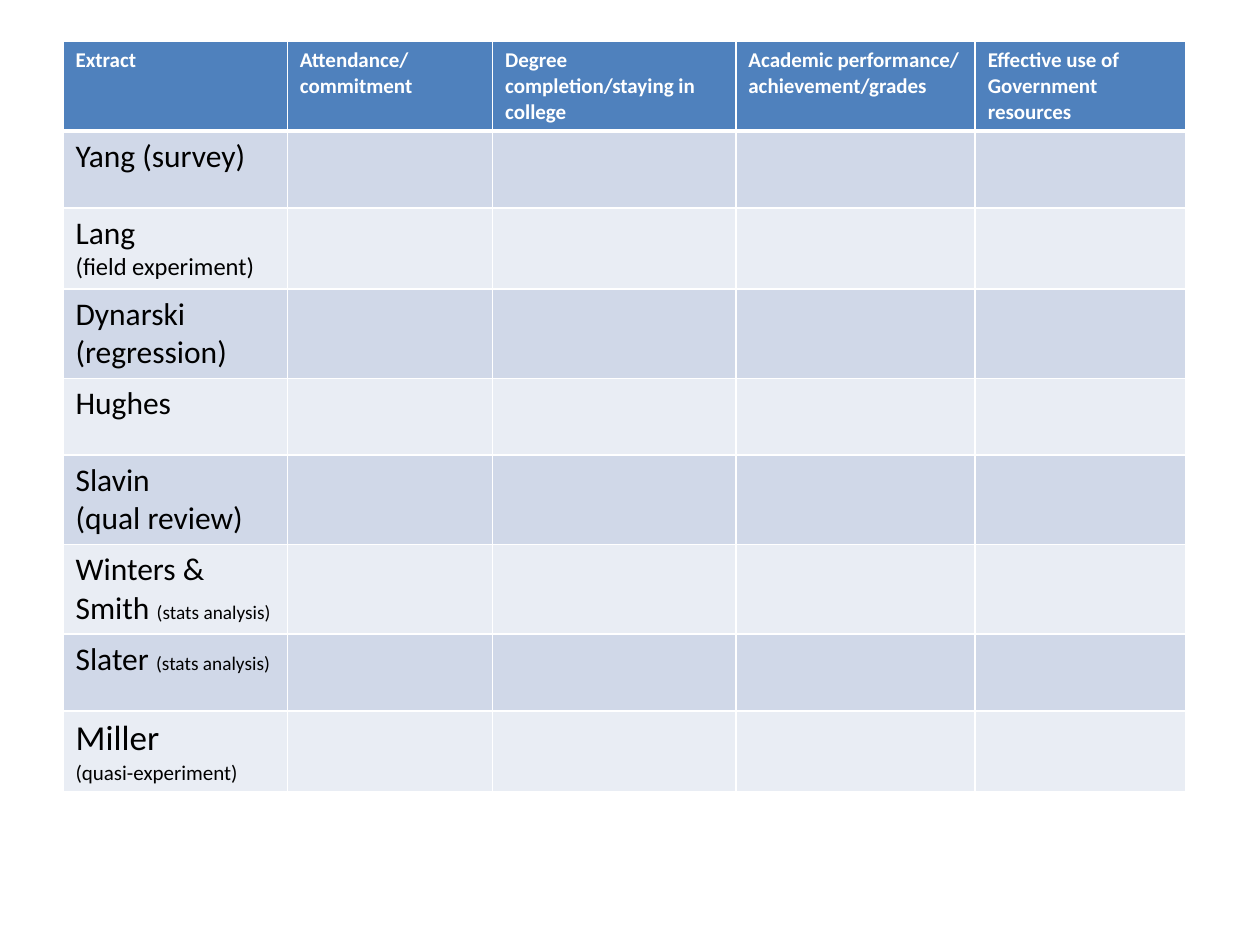
from lxml import etree
from pptx import Presentation
from pptx import util as u
from pptx.dml.color import RGBColor
from pptx.oxml.ns import qn

COLORS = {"header": "4F81BD", "odd": "D0D8E8", "even": "E9EDF4",
          "line": "FFFFFF", "head_text": "FFFFFF", "text": "000000"}
FONT = "Calibri"
COLS = [1.78, 1.63, 1.93, 1.9, 1.67]
ROW_H = 0.61

# Each cell is a list of paragraphs, each paragraph a list of (text, size) runs
HEADINGS = [
    [[("Extract", 12)]],
    [[("Attendance/", 12)], [("commitment", 12)]],
    [[("Degree completion/staying in college", 12)]],
    [[("Academic performance/", 12)], [("achievement/grades", 12)]],
    [[("Effective use of Government resources", 12)]],
]
EXTRACTS = [
    [[("Yang (survey)", 18)]],
    [[("Lang", 18)], [("(field experiment)", 14)]],
    [[("Dynarski", 18)], [("(regression)", 18)]],
    [[("Hughes", 18)]],
    [[("Slavin", 18)], [("(qual review)", 18)]],
    [[("Winters & Smith ", 18), ("(stats analysis)", 11)]],
    [[("Slater ", 18), ("(stats analysis)", 11)]],
    [[("Miller", 20)], [("(quasi-experiment)", 12)]],
]


def rgb(name):
    return RGBColor.from_string(COLORS[name])


def write_cell(cell, paragraphs, color, bold):
    tf = cell.text_frame
    for i, runs in enumerate(paragraphs):
        p = tf.add_paragraph() if i else tf.paragraphs[0]
        for words, size in runs:
            r = p.add_run()
            r.text = words
            r.font.name, r.font.size, r.font.bold = FONT, u.Pt(size), bold
            r.font.color.rgb = rgb(color)


def style_cell(cell, fill, top, bottom):
    cell.fill.solid()
    cell.fill.fore_color.rgb = rgb(fill)
    tc_pr = cell._tc.get_or_add_tcPr()
    # Border lines come before the fill
    for i, (side, width) in enumerate(zip("LRTB", (1, 1, top, bottom))):
        ln = etree.Element(qn(f"a:ln{side}"), w=str(u.Pt(width)))
        solid = etree.SubElement(ln, qn("a:solidFill"))
        etree.SubElement(solid, qn("a:srgbClr"), val=COLORS["line"])
        tc_pr.insert(i, ln)


def add_grid(s, left, top):
    rows = len(EXTRACTS) + 1
    frame = s.shapes.add_table(rows, len(COLS), u.Inches(left), u.Inches(top),
                               u.Inches(sum(COLS)), u.Inches(ROW_H * rows))
    table = frame.table
    table.horz_banding = False
    for column, width in zip(table.columns, COLS):
        column.width = u.Inches(width)
    for i, row in enumerate(table.rows):
        row.height = u.Inches(ROW_H)
        fill = "header" if i == 0 else "odd" if i % 2 else "even"
        for cell in row.cells:
            style_cell(cell, fill, 3 if i == 1 else 1, 3 if i == 0 else 1)
    return table


def main():
    prs = Presentation()
    prs.slide_width, prs.slide_height = u.Inches(10), u.Inches(7.5)
    s = prs.slides.add_slide(prs.slide_layouts[6])
    table = add_grid(s, 0.5, 0.33)

    # Header row
    for c, heading in enumerate(HEADINGS):
        write_cell(table.cell(0, c), heading, "head_text", True)

    # First column: one extract a row
    for i, extract in enumerate(EXTRACTS, start=1):
        write_cell(table.cell(i, 0), extract, "text", False)

    prs.save("out.pptx")


if __name__ == "__main__":
    main()
